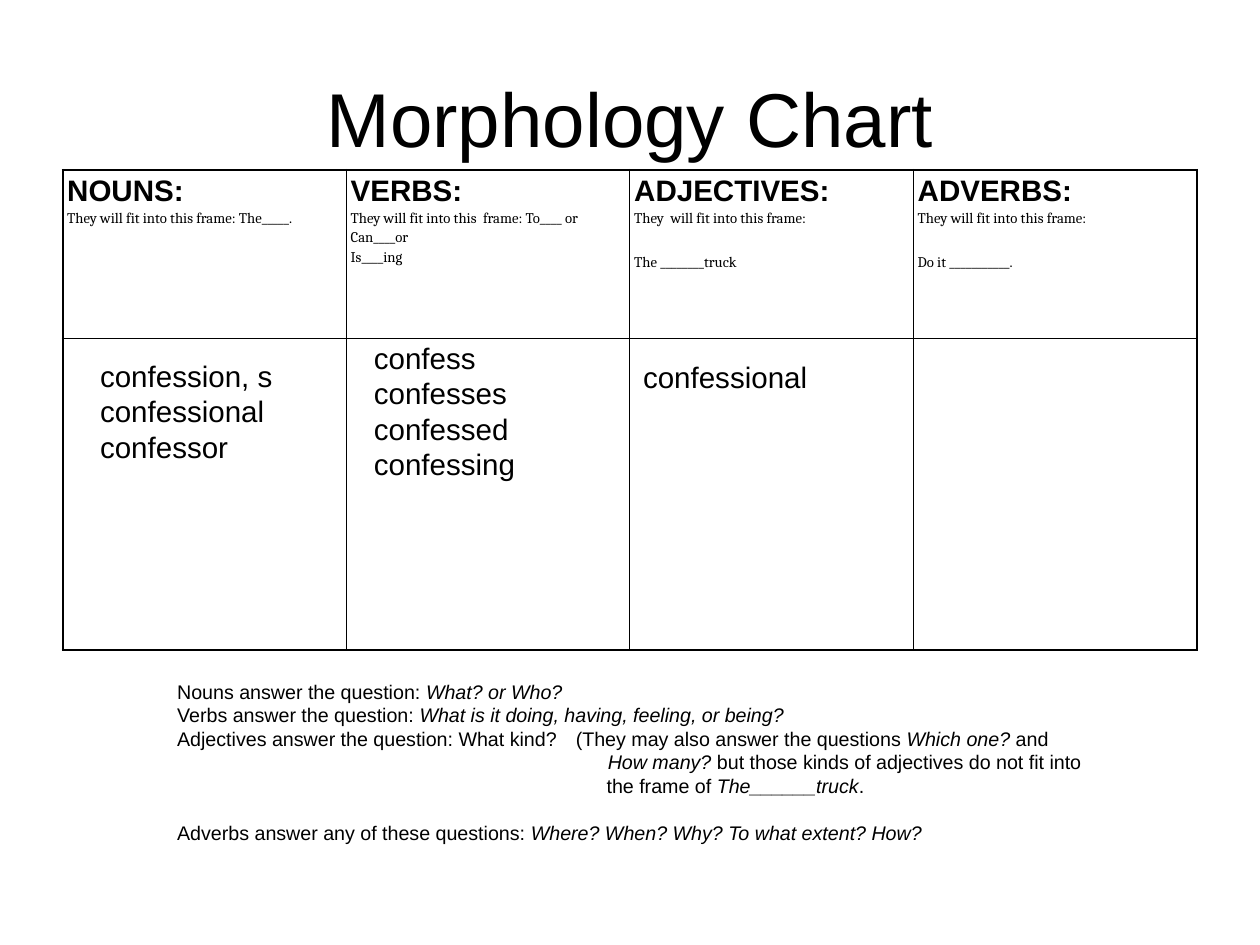
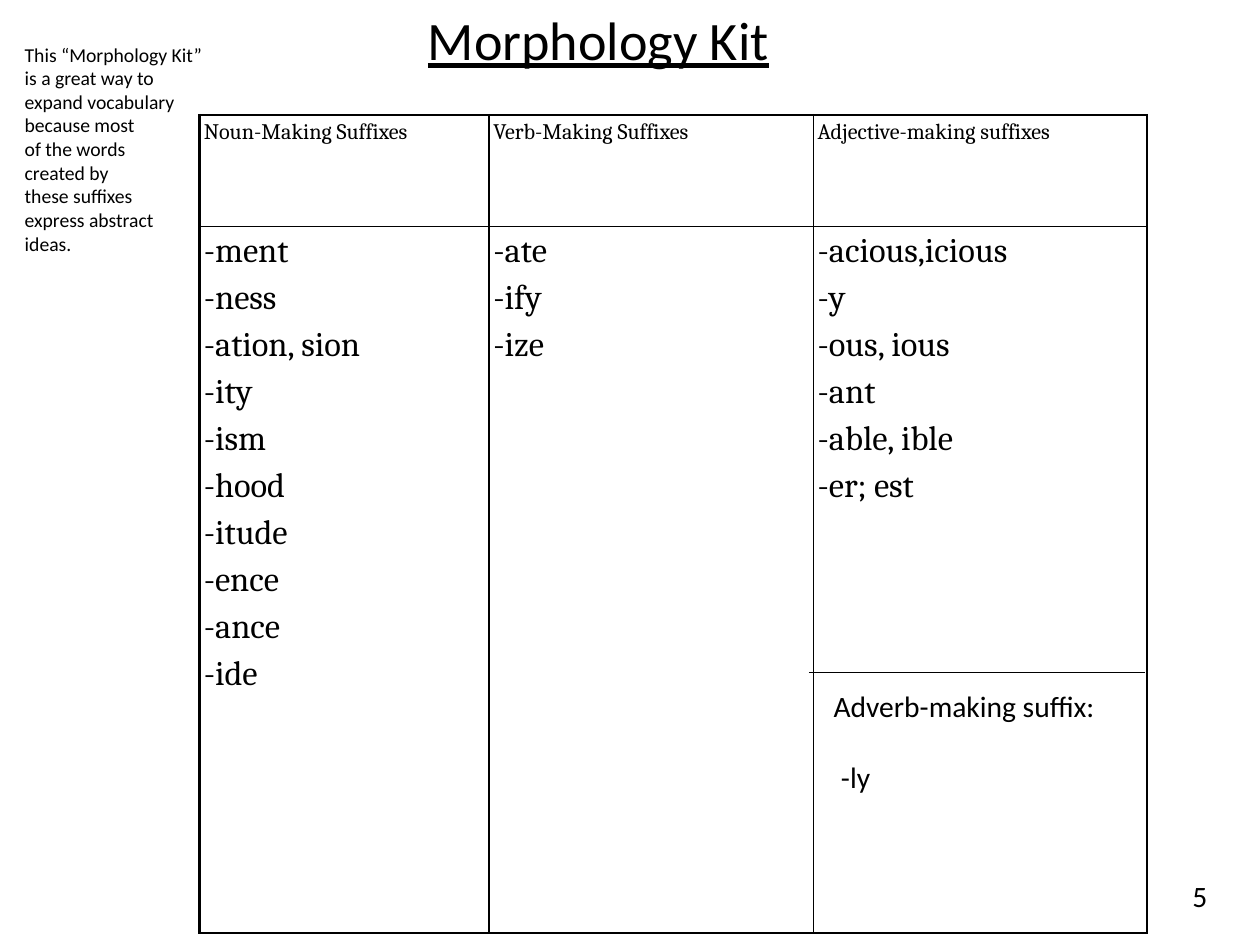
from dataclasses import dataclass

from lxml.etree import SubElement
from pptx import Presentation
from pptx.dml.color import RGBColor
from pptx.enum.shapes import MSO_CONNECTOR
from pptx.enum.text import MSO_ANCHOR, PP_ALIGN
from pptx.oxml import parse_xml
from pptx.oxml.ns import nsdecls, qn
from pptx.util import Pt


@dataclass(frozen=True)
class TextStyle:
    """Font, size and emphasis of a kind of text."""
    font: str
    size: float
    before: float = 0
    bold: bool = False
    underline: bool = False


@dataclass(frozen=True)
class Theme:
    """Colours, line widths and type styles of the presentation."""
    ink: RGBColor = RGBColor(0, 0, 0)
    paper: RGBColor = RGBColor(255, 255, 255)
    outer_line: float = 2.25
    inner_line: float = 1
    cell_inset: float = 3.6
    title: TextStyle = TextStyle("Arial", 62)
    kit_title: TextStyle = TextStyle("Calibri", 44, underline=True)
    word_class: TextStyle = TextStyle("Arial", 24, before=3, bold=True)
    frame: TextStyle = TextStyle("Cambria", 12, before=2)
    example: TextStyle = TextStyle("Arial", 24)
    question: TextStyle = TextStyle("Arial", 16)
    suffix_heading: TextStyle = TextStyle("Cambria", 18, before=4)
    suffix: TextStyle = TextStyle("Cambria", 28, before=6)
    side_note: TextStyle = TextStyle("Calibri", 16)
    label: TextStyle = TextStyle("Calibri", 24)


@dataclass(frozen=True)
class Line:
    """One paragraph, with italic parts between asterisks."""
    text: str
    style: TextStyle
    gap: float = 0
    indent: float = 0
    tab: float = 0


THEME = Theme()


def styled(style, *texts):
    """Return one line of the given style for each text."""
    return [Line(text, style) for text in texts]


def write_lines(text_frame, lines, align=PP_ALIGN.LEFT):
    """Fill a text frame with lines."""
    for index, line in enumerate(lines):
        paragraph = text_frame.add_paragraph() if index else text_frame.paragraphs[0]
        paragraph.alignment = align
        paragraph.space_before = Pt(line.style.before + line.gap)
        properties = paragraph._p.get_or_add_pPr()
        properties.set("marL", str(Pt(line.indent)))
        properties.set("indent", "0")
        if line.tab:
            stops = SubElement(properties, qn("a:tabLst"))
            SubElement(stops, qn("a:tab"), pos=str(Pt(line.tab)), algn="l")
        for part, text in enumerate(line.text.split("*")):
            if text:
                run = paragraph.add_run()
                run.text = text
                run.font.name = line.style.font
                run.font.size = Pt(line.style.size)
                run.font.bold = line.style.bold
                run.font.underline = line.style.underline
                run.font.italic = part % 2 == 1
                run.font.color.rgb = THEME.ink


def set_insets(target, inset):
    """Give a text frame or a cell equal margins."""
    target.margin_left = target.margin_right = Pt(inset)
    target.margin_top = target.margin_bottom = Pt(inset)


def add_text(slide, box, lines, inset=5, align=PP_ALIGN.LEFT, anchor=MSO_ANCHOR.TOP):
    """Add an unwrapped text box."""
    text_frame = slide.shapes.add_textbox(*map(Pt, box)).text_frame
    text_frame.word_wrap = False
    text_frame.vertical_anchor = anchor
    set_insets(text_frame, inset)
    write_lines(text_frame, lines, align)


def set_borders(cell, outer_sides):
    """Draw heavy lines on the outer sides of a cell and thin ones elsewhere."""
    properties = cell._tc.get_or_add_tcPr()
    for index, side in enumerate("LRTB"):
        width = THEME.outer_line if side in outer_sides else THEME.inner_line
        properties.insert(index, parse_xml(
            f'<a:ln{side} {nsdecls("a")} w="{Pt(width)}"><a:solidFill>'
            f'<a:srgbClr val="{THEME.ink}"/></a:solidFill></a:ln{side}>'))


def add_grid(slide, left, top, widths, heights, rows):
    """Add a ruled table whose cells hold lists of lines."""
    frame = slide.shapes.add_table(len(heights), len(widths), Pt(left), Pt(top),
                                   Pt(sum(widths)), Pt(sum(heights)))
    table = frame.table
    table.first_row = table.horz_banding = False
    for column, width in zip(table.columns, widths):
        column.width = Pt(width)
    for row, height in zip(table.rows, heights):
        row.height = Pt(height)
    for row_index, row in enumerate(rows):
        for column_index, lines in enumerate(row):
            cell = table.cell(row_index, column_index)
            set_insets(cell, THEME.cell_inset)
            cell.fill.solid()
            cell.fill.fore_color.rgb = THEME.paper
            edges = {"L": column_index == 0, "R": column_index == len(widths) - 1,
                     "T": row_index == 0, "B": row_index == len(heights) - 1}
            set_borders(cell, [side for side, is_outer in edges.items() if is_outer])
            write_lines(cell.text_frame, lines)


def add_rule(slide, left, right, y):
    """Add a thin horizontal line."""
    connector = slide.shapes.add_connector(
        MSO_CONNECTOR.STRAIGHT, Pt(left), Pt(y), Pt(right), Pt(y))
    connector.line.color.rgb = THEME.ink
    connector.line.width = Pt(THEME.inner_line)
    SubElement(connector._element.spPr, qn("a:effectLst"))


def add_word_classes(slide, left, top, width):
    """Add the table of word classes with its example words."""
    frame = THEME.frame
    headings = [
        ("NOUNS:", styled(frame, "They will fit into this frame: The_____.")),
        ("VERBS:", styled(frame, "They will fit into this  frame: To____ or",
                          "Can____or", "Is____ing")),
        ("ADJECTIVES:", [Line("They  will fit into this frame:", frame),
                         Line("The ________truck", frame, gap=20)]),
        ("ADVERBS:", [Line("They will fit into this frame:", frame),
                      Line("Do it ___________.", frame, gap=20)]),
    ]
    column = width / len(headings)
    header = [[Line(name, THEME.word_class), *lines] for name, lines in headings]
    add_grid(slide, left, top, [column] * len(headings), [136.8, 253.4],
             [header, [[] for _ in headings]])
    examples = [
        ((248.5, 134, 125.3, 123), ["confess", "confesses", "confessed", "confessing"]),
        ((26, 148.5, 150.5, 94.3), ["confession, s", "confessional", "confessor"]),
        ((467.3, 150, 144, 36), ["confessional"]),
    ]
    for (x, y, box_width, height), words in examples:
        add_text(slide, (left + x, top + y, box_width, height),
                 styled(THEME.example, *words), inset=4.3, anchor=MSO_ANCHOR.MIDDLE)


def add_questions(slide, box):
    """Add the questions that each word class answers."""
    style = THEME.question
    add_text(slide, box, [
        Line("Nouns answer the question: *What? or Who?*", style),
        Line("Verbs answer the question: *What is it doing, having, feeling, or being?*", style),
        Line("Adjectives answer the question: What kind?\t"
             "(They may also answer the questions *Which one?* and", style, tab=344),
        Line("*How many?* but those kinds of adjectives do not fit into", style, indent=350),
        Line("the frame of *The______truck*.", style, indent=349),
        Line("Adverbs answer any of these questions: "
             "*Where? When? Why? To what extent? How?*", style, gap=19),
    ])


def add_suffixes(slide, left, top):
    """Add the table of suffixes with the adverb section in its last column."""
    columns = {
        "Noun-Making Suffixes": ["-ment", "-ness", "-ation, sion", "-ity", "-ism",
                                 "-hood", "-itude", "-ence", "-ance", "-ide"],
        "Verb-Making Suffixes": ["-ate", "-ify", "-ize"],
        "Adjective-making suffixes": ["-acious,icious", "-y", "-ous, ious", "-ant",
                                      "-able, ible", "-er; est"],
    }
    add_grid(slide, left, top, [235.4, 263.5, 271.4], [90.7, 573.8],
             [[styled(THEME.suffix_heading, heading) for heading in columns],
              [styled(THEME.suffix, *suffixes) for suffixes in columns.values()]])
    add_rule(slide, left + 495.4, left + 768.2, top + 452.9)
    add_text(slide, (left + 510.5, top + 460.8, 224, 92),
             [Line("Adverb-making suffix:", THEME.label),
              Line("-ly", THEME.label, gap=29, indent=6)])


def build_chart_slide(slide):
    """Build the slide on word classes."""
    add_text(slide, (51, 31, 922, 128), styled(THEME.title, "Morphology Chart"),
             inset=0, align=PP_ALIGN.CENTER, anchor=MSO_ANCHOR.MIDDLE)
    add_word_classes(slide, 51, 138.2, 921.6)
    add_questions(slide, (139, 547.2, 748, 135.4))


def build_kit_slide(slide):
    """Build the slide on suffixes."""
    add_suffixes(slide, 162, 93.6)
    add_text(slide, (342.7, 0, 288.7, 54.7), styled(THEME.kit_title, "Morphology Kit"))
    add_text(slide, (964, 708.5, 23.8, 33.8), styled(THEME.label, "5"))
    add_text(slide, (15.1, 29.5, 155.5, 186.5), styled(
        THEME.side_note, "This “Morphology Kit”", "is a great way to", "expand vocabulary",
        "because most", "of the words", "created by", "these suffixes",
        "express abstract", "ideas."))


def main():
    """Build and save the presentation."""
    presentation = Presentation()
    presentation.slide_width, presentation.slide_height = Pt(1024), Pt(768)
    for build in (build_chart_slide, build_kit_slide):
        build(presentation.slides.add_slide(presentation.slide_layouts[6]))
    presentation.save("out.pptx")


if __name__ == "__main__":
    main()
